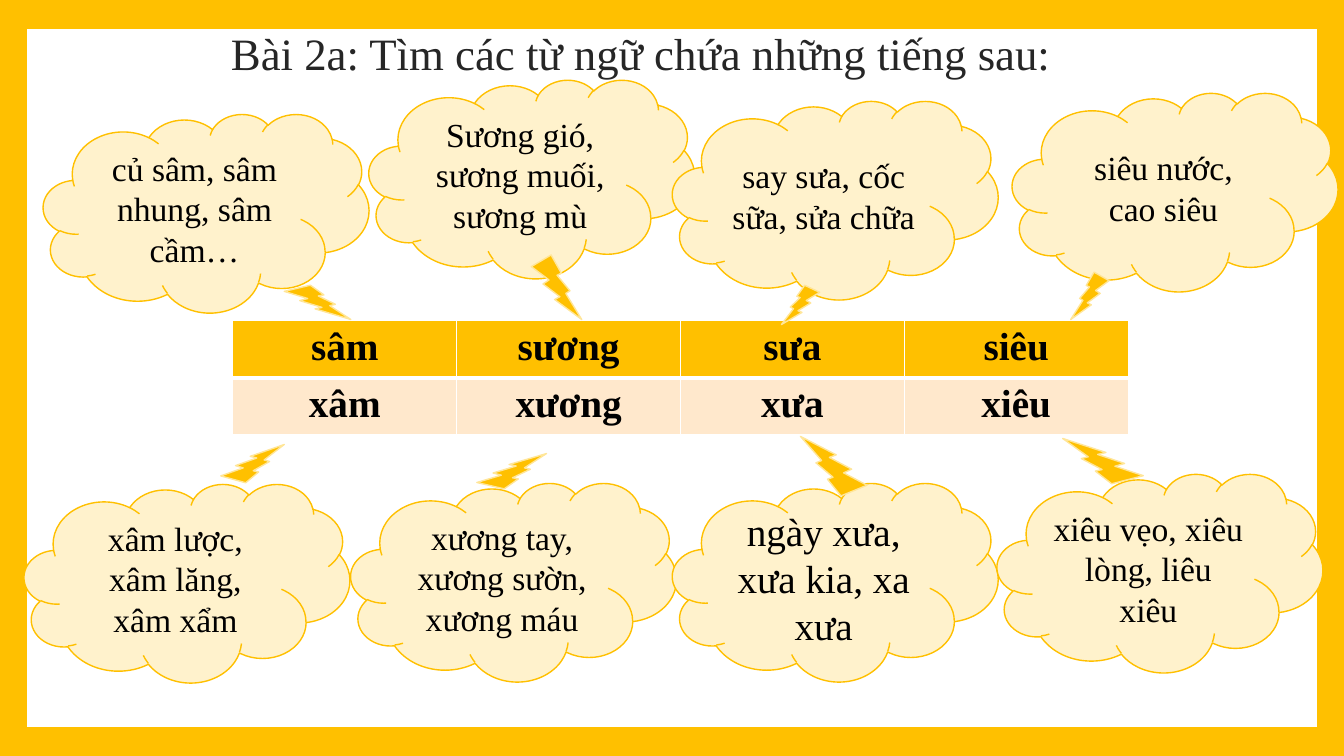
from dataclasses import dataclass

from lxml.etree import SubElement
from pptx import Presentation
from pptx.dml.color import RGBColor
from pptx.enum.shapes import MSO_SHAPE
from pptx.enum.text import MSO_ANCHOR, MSO_AUTO_SIZE, PP_ALIGN
from pptx.oxml.ns import qn
from pptx.util import Pt

EMU_PER_PX = 9144  # 100 px to the inch
CLOUD_SIZE = (323, 197)


@dataclass(frozen=True)
class Theme:
    font: str = "Times New Roman"
    gold: str = "FFC000"
    cream: str = "FFF2CC"
    pale_gold: str = "FFE699"
    peach: str = "FFE8CC"
    white: str = "FFFFFF"
    black: str = "000000"
    title_color: str = "262626"
    title_size: int = 32
    word_size: int = 28
    answer_size: int = 24


THEME = Theme()

# Each answer: text, type size, cloud corner, bolt box, bolt flips
ANSWERS = [
    ("củ sâm, sâm nhung, sâm cầm…", THEME.answer_size, (43, 113), (282, 283, 66, 34), ""),
    ("Sương gió, sương muối, sương mù", THEME.answer_size, (366, 79), (527, 253, 50, 64), ""),
    ("say sưa, cốc sữa, sửa chữa", THEME.answer_size, (667, 100), (775, 283, 38, 39), "H"),
    ("siêu nước, cao siêu", THEME.answer_size, (1004, 92), (1062, 270, 38, 47), "H"),
    ("xâm lược, xâm lăng, xâm xẩm", THEME.answer_size, (24, 480), (219, 441, 63, 38), "V"),
    ("xương tay, xương sườn, xương máu", THEME.answer_size, (348, 479), (473, 450, 69, 35), "V"),
    ("ngày xưa, xưa kia, xa xưa", THEME.word_size, (667, 479), (794, 433, 66, 59), "HV"),
    ("xiêu vẹo, xiêu lòng, liêu xiêu", THEME.answer_size, (989, 470), (1054, 435, 80, 45), "HV"),
]

WORDS = [
    ["sâm", "sương", "sưa", "siêu"],
    ["xâm", "xương", "xưa", "xiêu"],
]


def px(length):
    return length * EMU_PER_PX


def color(value):
    return RGBColor.from_string(value)


def write(text_frame, text, size, text_color, align=PP_ALIGN.CENTER, bold=False):
    paragraph = text_frame.paragraphs[0]
    paragraph.alignment = align
    run = paragraph.add_run()
    run.text = text
    run.font.name = THEME.font
    run.font.size = Pt(size)
    run.font.bold = bold
    run.font.color.rgb = color(text_color)


def add_preset(shapes, kind, box, fill, line=None):
    shape = shapes.add_shape(kind, *map(px, box))
    shape.shadow.inherit = False
    shape.fill.solid()
    shape.fill.fore_color.rgb = color(fill)
    if line:
        shape.line.color.rgb = color(line)
        shape.line.width = Pt(1)
    else:
        shape.line.fill.background()
    return shape


def add_frame(slide):
    add_preset(slide.shapes, MSO_SHAPE.RECTANGLE, (0, 0, 1333, 750), THEME.gold)
    add_preset(slide.shapes, MSO_SHAPE.RECTANGLE, (27, 29, 1279, 692), THEME.white)


def add_title(slide, text):
    title = slide.shapes.title
    title.left, title.top, title.width, title.height = map(px, (219, 21, 1071, 64))
    text_frame = title.text_frame
    text_frame.word_wrap = True
    text_frame.auto_size = MSO_AUTO_SIZE.SHAPE_TO_FIT_TEXT
    text_frame.vertical_anchor = MSO_ANCHOR.TOP
    write(text_frame, text, THEME.title_size, THEME.title_color, PP_ALIGN.LEFT)
    # Bring the title in front of the frame
    slide.shapes._spTree.append(title._element)


def add_border(cell, side, width):
    line = SubElement(cell._tc.get_or_add_tcPr(), qn(f"a:ln{side}"), w=str(Pt(width)))
    fill = SubElement(line, qn("a:solidFill"))
    SubElement(fill, qn("a:srgbClr"), val=THEME.white)


def add_word_table(slide):
    row_count, column_count = len(WORDS), len(WORDS[0])
    column_width, row_height = 222, 56
    table = slide.shapes.add_table(
        row_count, column_count, px(231), px(318),
        px(column_width * column_count), px(row_height * row_count),
    ).table
    for column in table.columns:
        column.width = px(column_width)
    for row_index, words in enumerate(WORDS):
        is_header = row_index == 0
        for column_index, word in enumerate(words):
            cell = table.cell(row_index, column_index)
            # A thick rule separates the two rows
            thick_side = "B" if is_header else "T"
            for side in "LRTB":
                add_border(cell, side, 3 if side == thick_side else 1)
            cell.fill.solid()
            cell.fill.fore_color.rgb = color(THEME.gold if is_header else THEME.peach)
            write(cell.text_frame, word, THEME.word_size, THEME.black, bold=True)


def add_answer(slide, text, size, corner, bolt_box, flips):
    group = slide.shapes.add_group_shape()
    # Cloud with the answer
    cloud = add_preset(group.shapes, MSO_SHAPE.CLOUD, corner + CLOUD_SIZE, THEME.cream, THEME.gold)
    cloud.text_frame.word_wrap = True
    cloud.text_frame.vertical_anchor = MSO_ANCHOR.MIDDLE
    write(cloud.text_frame, text, size, THEME.black)
    # Bolt towards the word in the table
    bolt = add_preset(group.shapes, MSO_SHAPE.LIGHTNING_BOLT, bolt_box, THEME.gold, THEME.pale_gold)
    for axis in flips:
        bolt._element.spPr.find(qn("a:xfrm")).set(f"flip{axis}", "1")


def main():
    presentation = Presentation()
    presentation.slide_width, presentation.slide_height = px(1333), px(750)
    slide = presentation.slides.add_slide(presentation.slide_layouts[5])
    add_frame(slide)
    add_title(slide, "Bài 2a: Tìm các từ ngữ chứa những tiếng sau:")
    add_word_table(slide)
    for answer in ANSWERS:
        add_answer(slide, *answer)
    presentation.save("out.pptx")


if __name__ == "__main__":
    main()
